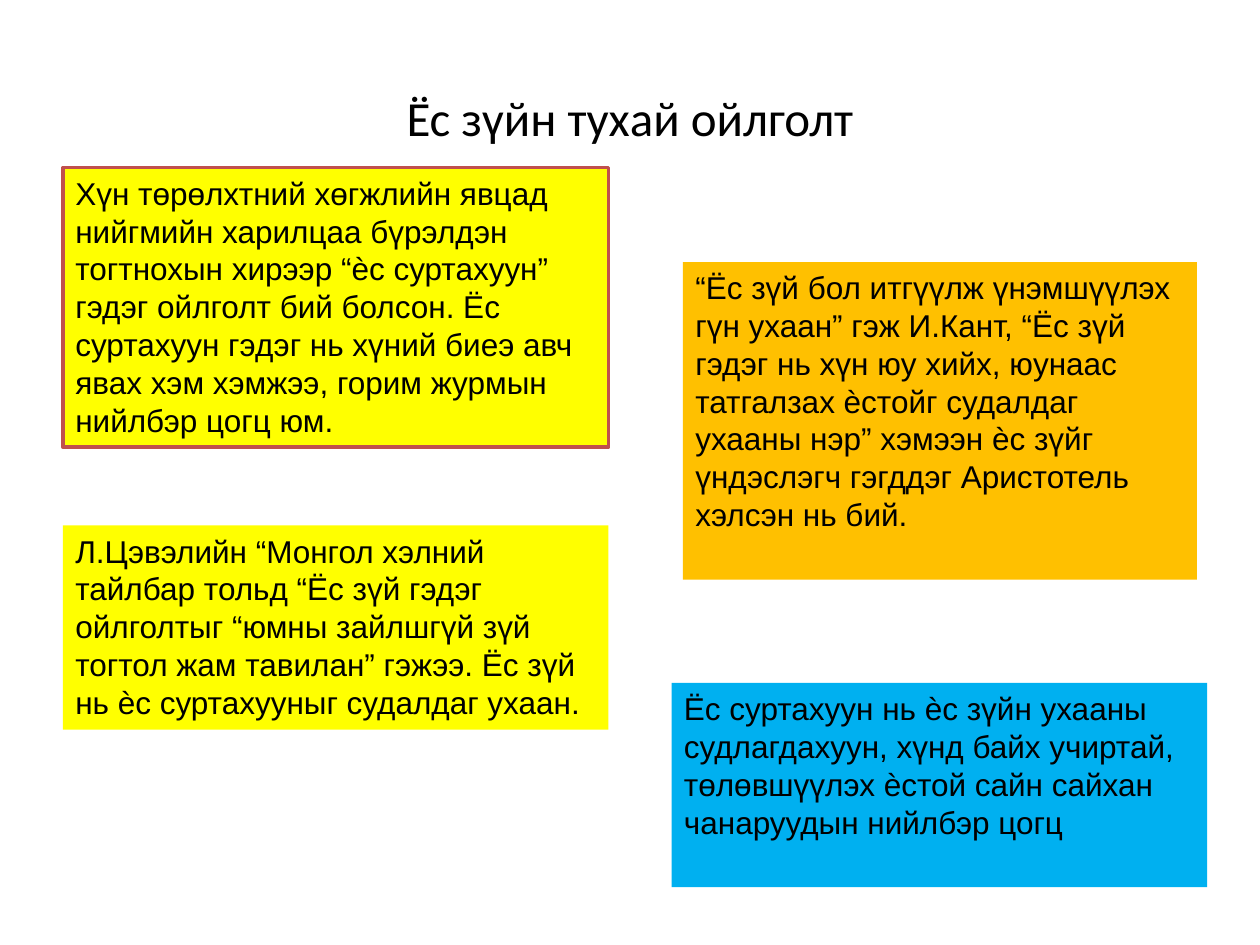
from pptx import Presentation
from pptx.dml.color import RGBColor
from pptx.enum.shapes import MSO_SHAPE
from pptx.enum.text import MSO_ANCHOR, PP_ALIGN
from pptx.util import Inches, Pt

RECTANGLE = MSO_SHAPE.RECTANGLE
TOP, MIDDLE = MSO_ANCHOR.TOP, MSO_ANCHOR.MIDDLE
LEFT, CENTER = PP_ALIGN.LEFT, PP_ALIGN.CENTER

YELLOW, ORANGE, BLUE = "FFFF00", "FFC000", "00B0F0"
RED, BLACK = "C0504D", "000000"

LEFT_COLUMN = 0.5
LEFT_WIDTH = 4.33

ORIGIN = (
    "Хүн төрөлхтний хөгжлийн явцад нийгмийн харилцаа бүрэлдэн тогтнохын "
    "хирээр “ѐс суртахуун” гэдэг ойлголт бий болсон. Ёс суртахуун гэдэг нь "
    "хүний биеэ авч явах хэм хэмжээ, горим журмын нийлбэр цогц юм."
)
DICTIONARY = (
    "Л.Цэвэлийн “Монгол хэлний тайлбар тольд “Ёс зүй гэдэг ойлголтыг “юмны "
    "зайлшгүй зүй тогтол жам тавилан” гэжээ. Ёс зүй нь ѐс суртахууныг "
    "судалдаг ухаан."
)
PHILOSOPHERS = (
    "“Ёс зүй бол итгүүлж үнэмшүүлэх гүн ухаан” гэж И.Кант, “Ёс зүй гэдэг нь "
    "хүн юу хийх, юунаас татгалзах ѐстойг судалдаг ухааны нэр” хэмээн ѐс "
    "зүйг үндэслэгч гэгддэг Аристотель хэлсэн нь бий."
)
MORALITY = (
    "Ёс суртахуун нь ѐс зүйн ухааны судлагдахуун, хүнд байх учиртай, "
    "төлөвшүүлэх ѐстой сайн сайхан чанаруудын нийлбэр цогц"
)


def color(hex_code):
    return RGBColor.from_string(hex_code)


def write_text(holder, text, size=18, font="Arial", align=LEFT, anchor=TOP):
    frame = holder.text_frame
    frame.word_wrap = True
    frame.vertical_anchor = anchor
    paragraph = frame.paragraphs[0]
    paragraph.alignment = align
    run = paragraph.add_run()
    run.text = text
    run.font.size = Pt(size)
    run.font.name = font
    run.font.color.rgb = color(BLACK)


def add_title(slide, text):
    title = slide.shapes.add_textbox(
        Inches(0.5), Inches(0.3), Inches(9), Inches(1.25)
    )
    write_text(title, text, size=28, font="Calibri", align=CENTER, anchor=MIDDLE)


def add_definition(slide, text, left, top, width, height, fill, border=None):
    panel = slide.shapes.add_shape(
        RECTANGLE, Inches(left), Inches(top), Inches(width), Inches(height)
    )
    panel.shadow.inherit = False
    panel.fill.solid()
    panel.fill.fore_color.rgb = color(fill)
    if border:
        panel.line.color.rgb = color(border)
        panel.line.width = Pt(2)
    else:
        panel.line.fill.background()
    write_text(panel, text)


def main():
    deck = Presentation()
    deck.slide_width = Inches(10)
    deck.slide_height = Inches(7.5)
    slide = deck.slides.add_slide(deck.slide_layouts[6])

    add_title(slide, "Ёс зүйн тухай ойлголт")
    add_definition(slide, ORIGIN, LEFT_COLUMN, 1.33, LEFT_WIDTH, 2.22, YELLOW, border=RED)
    add_definition(slide, DICTIONARY, LEFT_COLUMN, 4.17, LEFT_WIDTH, 1.62, YELLOW)
    add_definition(slide, PHILOSOPHERS, 5.42, 2.08, 4.08, 2.52, ORANGE)
    add_definition(slide, MORALITY, 5.33, 5.42, 4.25, 1.62, BLUE)

    deck.save("out.pptx")


if __name__ == "__main__":
    main()
